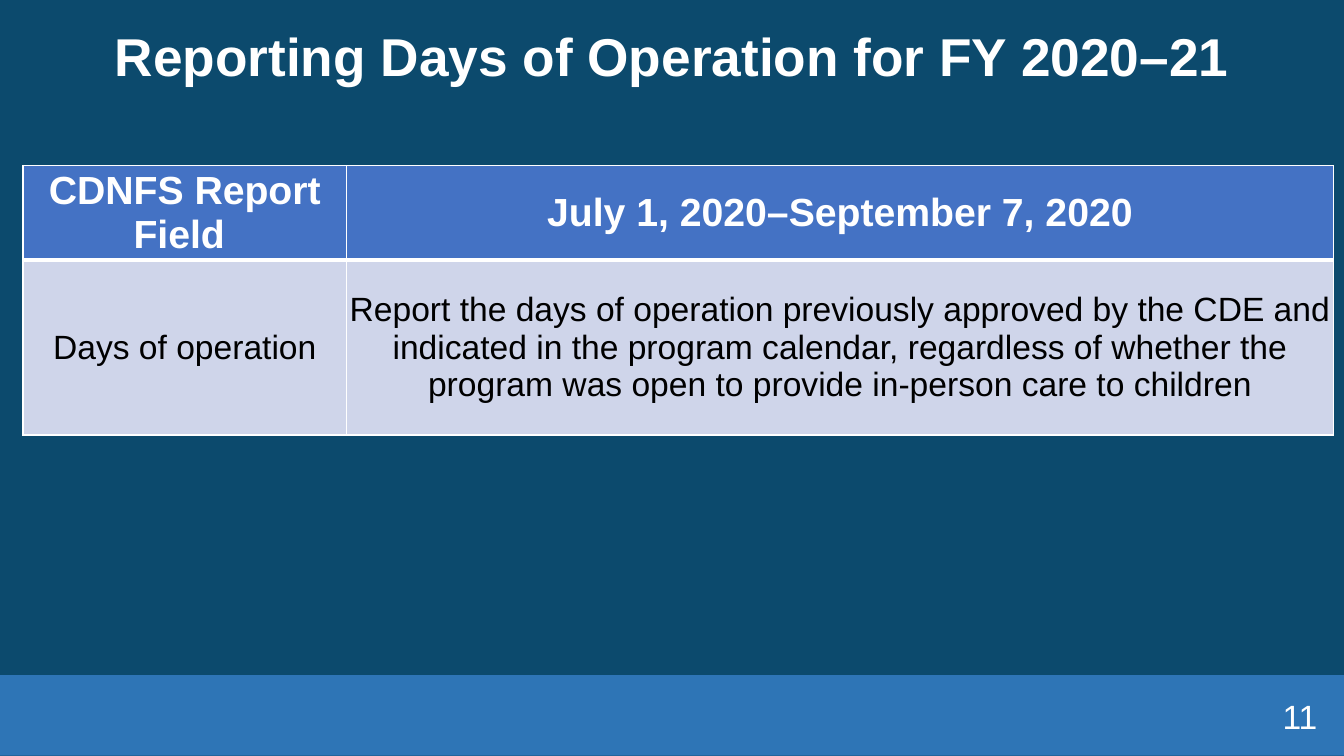
from lxml import etree
from pptx import Presentation
from pptx import util as u
from pptx.dml import color
from pptx.enum import shapes, text
from pptx.oxml import ns

WIDE, HIGH = 33.87, 19.05


class Deck:
    """Holds the style and the current slide, and draws each kind of element."""

    font = "Arial"
    hues = {"back": "0C4A6D", "bar": "2E75B6", "head": "4472C4",
            "body": "CFD5EA", "light": "FFFFFF", "dark": "000000"}

    def __init__(self):
        self.prs = Presentation()
        self.prs.slide_width, self.prs.slide_height = u.Cm(WIDE), u.Cm(HIGH)
        self.slide = self.prs.slides.add_slide(self.prs.slide_layouts[6])
        self.paint(self.slide.background.fill, "back")

    def paint(self, fill, hue):
        fill.solid()
        fill.fore_color.rgb = color.RGBColor.from_string(self.hues[hue])

    def put(self, frame, words, size, hue="light", bold=False, align="CENTER", gap=1.0):
        frame.word_wrap = True
        para = frame.paragraphs[0]
        para.alignment = text.PP_ALIGN[align]
        para.line_spacing = gap
        run = para.add_run()
        run.text = words
        run.font.name, run.font.size, run.font.bold = self.font, u.Pt(size), bold
        run.font.color.rgb = color.RGBColor.from_string(self.hues[hue])

    def bar(self, box, hue):
        shape = self.slide.shapes.add_shape(shapes.MSO_SHAPE.RECTANGLE, *map(u.Cm, box))
        shape.shadow.inherit = False
        self.paint(shape.fill, hue)
        shape.line.fill.background()

    def label(self, box, words, size, **style):
        frame = self.slide.shapes.add_textbox(*map(u.Cm, box)).text_frame
        frame.vertical_anchor = text.MSO_ANCHOR.MIDDLE
        self.put(frame, words, size, **style)

    def edge(self, cell, **widths):
        props = cell._tc.get_or_add_tcPr()
        for spot, side in enumerate("LRTB"):
            line = etree.Element(ns.qn(f"a:ln{side}"), w=str(u.Pt(widths.get(side, 1))))
            fill = etree.SubElement(line, ns.qn("a:solidFill"))
            etree.SubElement(fill, ns.qn("a:srgbClr"), val=self.hues["light"])
            props.insert(spot, line)

    def table(self, left, top, cols, rows, data, looks):
        box = map(u.Cm, (left, top, sum(cols), sum(rows)))
        grid = self.slide.shapes.add_table(len(rows), len(cols), *box).table
        for col, width in zip(grid.columns, cols):
            col.width = u.Cm(width)
        for row, height, line, look in zip(grid.rows, rows, data, looks):
            row.height = u.Cm(height)
            for cell, words in zip(row.cells, line):
                cell.margin_left = cell.margin_right = 0
                cell.margin_top = cell.margin_bottom = 0
                cell.vertical_anchor = text.MSO_ANCHOR.MIDDLE
                self.paint(cell.fill, look["fill"])
                self.edge(cell, **look["edge"])
                self.put(cell.text_frame, words, **look["type"])


def main():
    deck = Deck()
    deck.bar((0, 17.01, WIDE, 2.03), "bar")
    deck.label((0.43, 0.56, 33.02, 1.85), "Reporting Days of Operation for FY 2020–21",
               38, bold=True, gap=0.9)
    data = [
        ("CDNFS Report Field ", "July 1, 2020–September 7, 2020"),
        ("Days of operation",
         "Report the days of operation previously approved by the CDE and "
         "indicated in the program calendar, regardless of whether the "
         "program was open to provide in-person care to children"),
    ]
    looks = [
        {"fill": "head", "edge": {"B": 3}, "type": {"size": 28, "bold": True}},
        {"fill": "body", "edge": {"T": 3}, "type": {"size": 24, "hue": "dark"}},
    ]
    deck.table(0.58, 4.17, (8.15, 24.87), (2.29, 4.42), data, looks)
    deck.label((25.83, 17.53, 7.62, 1.02), "11", 24, align="RIGHT")
    deck.prs.save("out.pptx")


if __name__ == "__main__":
    main()
